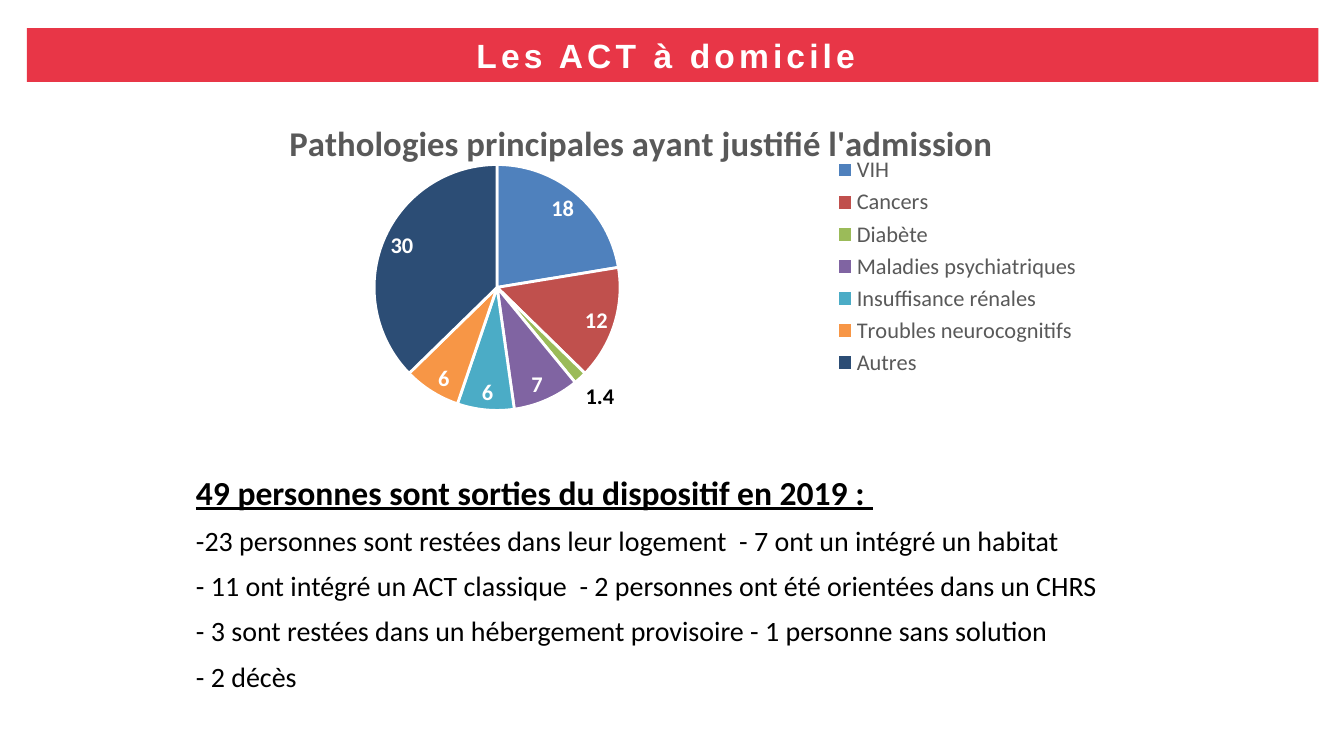
from dataclasses import dataclass

from lxml.etree import SubElement
from pptx import Presentation
from pptx.chart.data import CategoryChartData
from pptx.dml.color import RGBColor
from pptx.enum.chart import XL_CHART_TYPE as ChartType
from pptx.enum.chart import XL_LABEL_POSITION as LabelPosition
from pptx.enum.chart import XL_LEGEND_POSITION as LegendPosition
from pptx.enum.text import MSO_ANCHOR as Anchor
from pptx.enum.text import PP_ALIGN as Align
from pptx.oxml.ns import qn
from pptx.util import Inches, Pt


@dataclass(frozen=True)
class Theme:
    """Colours, fonts and type sizes of the slide."""
    banner: str = "E83647"
    white: str = "FFFFFF"
    black: str = "000000"
    grey: str = "595959"
    heading_font: str = "Arial"
    body_font: str = "Calibri"
    heading: float = 18
    chart_title: float = 18.6
    body: float = 15
    label: float = 12
    chart_base: float = 10


THEME = Theme()
CHART_TITLE = "Pathologies principales ayant justifié l'admission"
PATHOLOGIES = [
    ("VIH", 18, "4F81BD"),
    ("Cancers", 12, "C0504D"),
    ("Diabète", 1.4, "9BBB59"),
    ("Maladies psychiatriques", 7, "8064A2"),
    ("Insuffisance rénales", 6, "4BACC6"),
    ("Troubles neurocognitifs", 6, "F79646"),
    ("Autres ", 30, "2C4D75"),
]
SMALLEST_SLICE = 2
EXITS_HEADING = "49 personnes sont sorties du dispositif en 2019 : "
EXITS = [
    "-23 personnes sont restées dans leur logement  - 7 ont un intégré un habitat ",
    "- 11 ont intégré un ACT classique  - 2 personnes ont été orientées dans un CHRS ",
    "- 3 sont restées dans un hébergement provisoire - 1 personne sans solution ",
    "- 2 décès",
]


def style_font(font, size, color, name=THEME.body_font, bold=False, underline=False):
    """Apply a typeface, size, colour and weight to a font."""
    font.name, font.size = name, Pt(size)
    font.bold, font.underline = bold, underline
    font.color.rgb = RGBColor.from_string(color)


def write(paragraph, text, align=None, tracking=0, **font_format):
    """Add a formatted run to a paragraph."""
    run = paragraph.add_run()
    run.text = text
    style_font(run.font, **font_format)
    if align is not None:
        paragraph.alignment = align
    if tracking:
        run.font._element.set("spc", str(round(tracking * 100)))


def set_layout(element, target=None, **position):
    """Give a chart element a manual layout in fractions of the chart."""
    layout = element.find(qn("c:layout"))
    if layout is None:
        layout = SubElement(element, qn("c:layout"))
        anchor = next(child for tag in ("c:tx", "c:legendPos")
                      for child in element.findall(qn(tag)))
        anchor.addnext(layout)
    for child in list(layout):
        layout.remove(child)
    manual = SubElement(layout, qn("c:manualLayout"))
    settings = {"layoutTarget": target} if target else {}
    settings |= {"xMode": "edge", "yMode": "edge"} | position
    for name, value in settings.items():
        SubElement(manual, qn(f"c:{name}")).set("val", str(value))


def add_banner(slide):
    """Turn the title placeholder into the coloured banner."""
    banner = slide.shapes.title
    banner.left, banner.top = Inches(0.2), Inches(0.21)
    banner.width, banner.height = Inches(9.61), Inches(0.4)
    banner.fill.solid()
    banner.fill.fore_color.rgb = RGBColor.from_string(THEME.banner)
    frame = banner.text_frame
    frame.vertical_anchor = Anchor.MIDDLE
    write(frame.paragraphs[0], "Les ACT à domicile ", align=Align.CENTER, tracking=2.2,
          size=THEME.heading, color=THEME.white, name=THEME.heading_font, bold=True)


def color_slices(series):
    """Fill each slice and separate it with a white line."""
    for index, (_, _, color) in enumerate(PATHOLOGIES):
        look = series.points[index].format
        look.fill.solid()
        look.fill.fore_color.rgb = RGBColor.from_string(color)
        look.line.color.rgb = RGBColor.from_string(THEME.white)
        look.line.width = Pt(1.5)


def label_slices(series):
    """Show values in the slices, with the smallest one outside."""
    labels = series.data_labels
    labels.show_value = True
    labels.position = LabelPosition.BEST_FIT
    style_font(labels.font, THEME.label, THEME.white, bold=True)
    outside = series.points[SMALLEST_SLICE].data_label
    style_font(outside.font, THEME.label, THEME.black, bold=True)
    outside.position = LabelPosition.OUTSIDE_END


def add_pathology_chart(slide):
    """Add the pie chart of pathologies with its title and legend."""
    data = CategoryChartData()
    data.categories = [name for name, _, _ in PATHOLOGIES]
    data.add_series(CHART_TITLE, [value for _, value, _ in PATHOLOGIES])
    chart = slide.shapes.add_chart(ChartType.PIE, Inches(1.36), Inches(0.79),
                                   Inches(6.78), Inches(2.41), data).chart
    style_font(chart.font, THEME.chart_base, THEME.black)
    chart.has_title = True
    write(chart.chart_title.text_frame.paragraphs[0], CHART_TITLE,
          size=THEME.chart_title, color=THEME.grey, bold=True)
    chart.chart_title.include_in_layout = False
    set_layout(chart.chart_title._element, x=0.11, y=0.02)

    chart.has_legend = True
    legend = chart.legend
    legend.position = LegendPosition.RIGHT
    legend.include_in_layout = False
    style_font(legend.font, THEME.label, THEME.grey)
    set_layout(legend._element, x=0.71, y=0.14, w=0.28, h=0.71)

    pie = chart.plots[0]
    pie.vary_by_categories = True
    color_slices(pie.series[0])
    label_slices(pie.series[0])
    plot_area = chart._chartSpace.chart.plotArea
    if plot_area.find(qn("c:layout")) is None:
        plot_area.insert(0, plot_area.makeelement(qn("c:layout")))
    set_layout(plot_area, target="inner", x=0.21, y=0.18, w=0.27, h=0.76)


def add_exits(slide):
    """Add the heading and list of people who left the scheme."""
    frame = slide.shapes.add_textbox(Inches(1.36), Inches(3.43),
                                     Inches(7.39), Inches(1.75)).text_frame
    frame.word_wrap = True
    write(frame.paragraphs[0], EXITS_HEADING, size=THEME.heading,
          color=THEME.black, bold=True, underline=True)
    for line in EXITS:
        write(frame.add_paragraph(), line, size=THEME.body, color=THEME.black)
    for paragraph in frame.paragraphs:
        paragraph.alignment = Align.JUSTIFY
        paragraph.line_spacing = 1.1
        paragraph.space_before = paragraph.space_after = Pt(2.2)


def main():
    """Build and save the slide."""
    deck = Presentation()
    deck.slide_width = Inches(10)
    deck.slide_height = deck.slide_width * 9 // 16
    slide = deck.slides.add_slide(deck.slide_layouts[5])
    add_exits(slide)
    add_pathology_chart(slide)
    add_banner(slide)
    deck.save("out.pptx")


if __name__ == "__main__":
    main()
